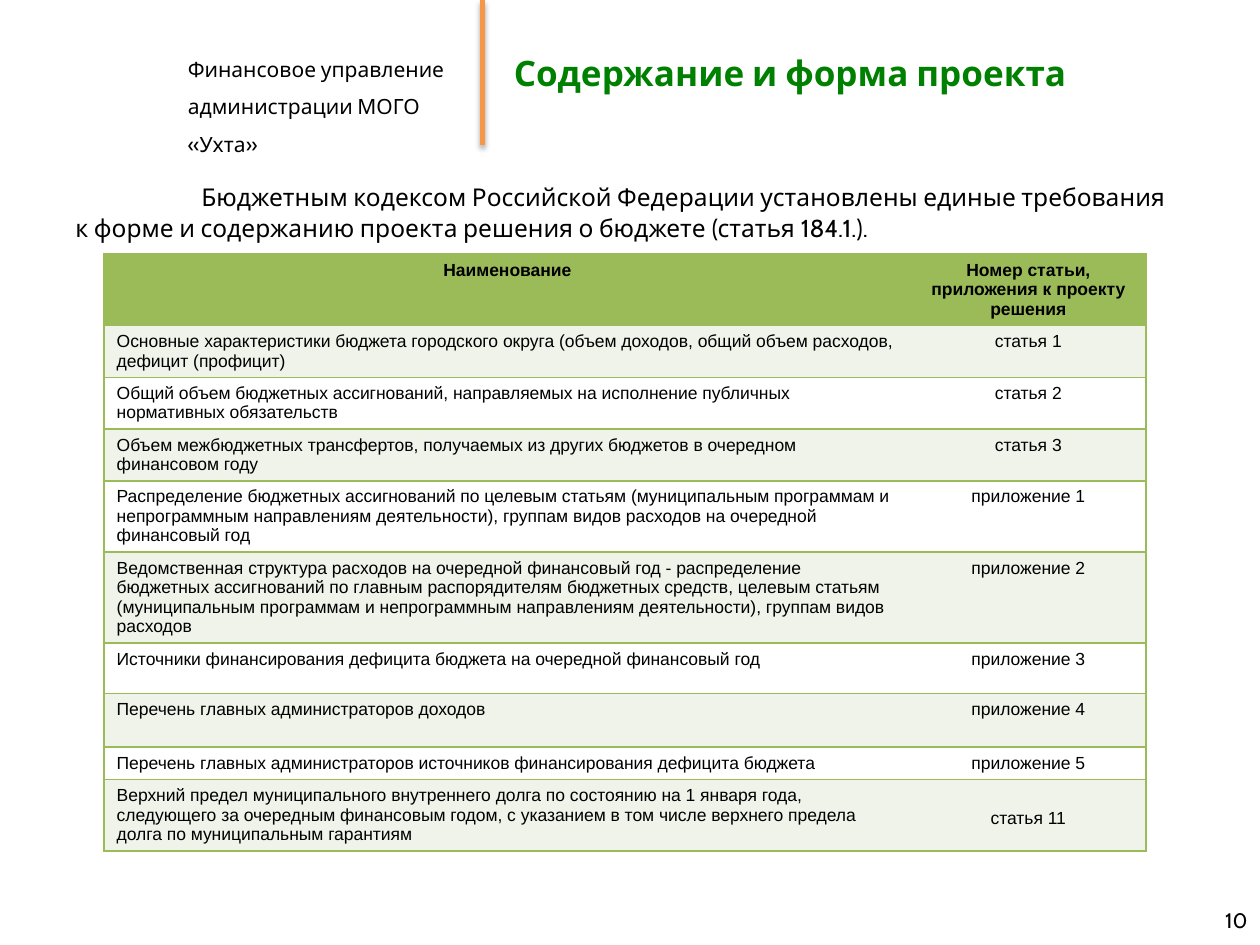
"""Build the slide on the contents of the draft budget decision."""
from dataclasses import dataclass

from lxml.etree import SubElement
from pptx import Presentation
from pptx.dml.color import RGBColor
from pptx.enum.shapes import MSO_CONNECTOR
from pptx.enum.text import MSO_ANCHOR, PP_ALIGN
from pptx.oxml.ns import qn
from pptx.util import Pt

BLACK = RGBColor(0x00, 0x00, 0x00)
WHITE = RGBColor(0xFF, 0xFF, 0xFF)
GREEN = RGBColor(0x9B, 0xBB, 0x59)
PALE = RGBColor(0xEF, 0xF3, 0xEA)
TITLE_GREEN = RGBColor(0x00, 0x80, 0x00)
ORANGE = RGBColor(0xF7, 0x96, 0x46)
NO_STYLE = "{2D5ABB26-0587-4C30-8999-92F81FD0307C}"


@dataclass
class Row:
    name: str
    place: str
    height: float
    anchor: MSO_ANCHOR = MSO_ANCHOR.TOP


ROWS = [
    Row("Наименование", "Номер статьи, приложения к проекту решения", 40.8),
    Row("Основные характеристики бюджета городского округа (объем доходов, "
        "общий объем расходов, дефицит (профицит)", "статья 1", 29.6),
    Row("Общий объем бюджетных ассигнований, направляемых на исполнение "
        "публичных нормативных обязательств", "статья 2", 29.6),
    Row("Объем межбюджетных трансфертов, получаемых из других бюджетов в "
        "очередном финансовом году", "статья 3", 29.6),
    Row("Распределение бюджетных ассигнований по целевым статьям "
        "(муниципальным программам и непрограммным направлениям "
        "деятельности), группам видов расходов на очередной финансовый год",
        "приложение 1", 40.8),
    Row("Ведомственная структура расходов на очередной финансовый год - "
        "распределение бюджетных ассигнований по главным распорядителям "
        "бюджетных средств, целевым статьям (муниципальным программам и "
        "непрограммным направлениям деятельности), группам видов расходов",
        "приложение 2", 52),
    Row("Источники финансирования дефицита бюджета на очередной финансовый "
        "год", "приложение 3", 28.8),
    Row("Перечень главных администраторов доходов", "приложение 4", 30.6),
    Row("Перечень главных администраторов источников финансирования "
        "дефицита бюджета", "приложение 5", 18.6),
    Row("Верхний предел муниципального внутреннего долга по состоянию на "
        "1 января года, следующего за очередным финансовым годом, с указанием "
        "в том числе верхнего предела долга по муниципальным гарантиям",
        "статья 11", 40.8, MSO_ANCHOR.MIDDLE),
]
COL_WIDTHS = (460.8, 134.6)


def write(tf, lines: list[str], size: float, color: RGBColor = BLACK,
          font: str = "Cabin", bold: bool = False,
          align: PP_ALIGN = PP_ALIGN.LEFT) -> None:
    tf.text = "\n".join(lines)
    for p in tf.paragraphs:
        p.alignment = align
        for r in p.runs:
            r.font.size = Pt(size)
            r.font.name = font
            r.font.bold = bold
            r.font.color.rgb = color


def add_text(s, left: float, top: float, width: float, height: float,
             lines: list[str], size: float,
             align: PP_ALIGN = PP_ALIGN.LEFT):
    sp = s.shapes.add_textbox(Pt(left), Pt(top), Pt(width), Pt(height))
    tf = sp.text_frame
    tf.word_wrap = True
    write(tf, lines, size, align=align)
    return tf


def add_divider(s) -> None:
    line = s.shapes.add_connector(
        MSO_CONNECTOR.STRAIGHT, Pt(275.8), Pt(0), Pt(275.8), Pt(82.8))
    line.line.color.rgb = ORANGE
    line.line.width = Pt(3)
    effects = SubElement(line._element.spPr, qn("a:effectLst"))
    shadow = SubElement(effects, qn("a:outerShdw"), blurRad=str(Pt(3.1)),
                        dist=str(Pt(1.8)), dir="5400000", rotWithShape="0")
    color = SubElement(shadow, qn("a:srgbClr"), val=str(BLACK))
    SubElement(color, qn("a:alpha"), val="35000")


def add_borders(cell, sides: str) -> None:
    tcPr = cell._tc.get_or_add_tcPr()
    for side in sides:
        ln = SubElement(tcPr, qn(f"a:ln{side}"), w=str(Pt(1)))
        fill = SubElement(ln, qn("a:solidFill"))
        SubElement(fill, qn("a:srgbClr"), val=str(GREEN))


def add_budget_table(s, rows: list[Row]) -> None:
    table = s.shapes.add_table(
        len(rows), len(COL_WIDTHS), Pt(59.5), Pt(145.2), Pt(sum(COL_WIDTHS)),
        Pt(sum(row.height for row in rows))).table
    table._tbl.tblPr.find(qn("a:tableStyleId")).text = NO_STYLE
    for col, width in zip(table.columns, COL_WIDTHS):
        col.width = Pt(width)
    for i, row in enumerate(rows):
        table.rows[i].height = Pt(row.height)
        header = i == 0
        color = GREEN if header else PALE if i % 2 else WHITE
        name, place = table.cell(i, 0), table.cell(i, 1)
        add_borders(name, "LTB")
        add_borders(place, "RTB")
        for cell in (name, place):
            cell.margin_bottom = Pt(0)
            cell.fill.solid()
            cell.fill.fore_color.rgb = color
        place.vertical_anchor = row.anchor
        write(name.text_frame, [row.name], 10, font="Arial", bold=header,
              align=PP_ALIGN.CENTER if header else PP_ALIGN.LEFT)
        write(place.text_frame, [row.place], 10, font="Arial", bold=header,
              align=PP_ALIGN.CENTER)


def main() -> None:
    prs = Presentation()
    prs.slide_width, prs.slide_height = Pt(720), Pt(540)
    s = prs.slides.add_slide(prs.slide_layouts[5])

    department = add_text(s, 100.3, 21.4, 180, 47.5, [
        "Финансовое управление", "администрации МОГО «Ухта»"], 12)
    for p in department.paragraphs:
        p.line_spacing = 1.5
    add_divider(s)

    title = s.shapes.title
    title.left, title.top = Pt(286.4), Pt(0)
    title.width, title.height = Pt(433.6), Pt(82.8)
    title.text_frame.vertical_anchor = MSO_ANCHOR.MIDDLE
    write(title.text_frame, ["Содержание и форма проекта"], 20, TITLE_GREEN,
          bold=True)

    intro = add_text(s, 36, 99.8, 640, 42, [
        "Бюджетным кодексом Российской Федерации установлены единые "
        "требования к форме и содержанию проекта решения о бюджете "
        "(статья 184.1.)."], 14)
    intro.paragraphs[0].line_spacing = 1.04
    intro.paragraphs[0]._p.get_or_add_pPr().set("indent", str(Pt(72)))

    number = add_text(s, 552.2, 511.2, 167.8, 28.8, ["10"], 12,
                      PP_ALIGN.RIGHT)
    number.vertical_anchor = MSO_ANCHOR.MIDDLE
    add_budget_table(s, ROWS)
    prs.save("out.pptx")


if __name__ == "__main__":
    main()
